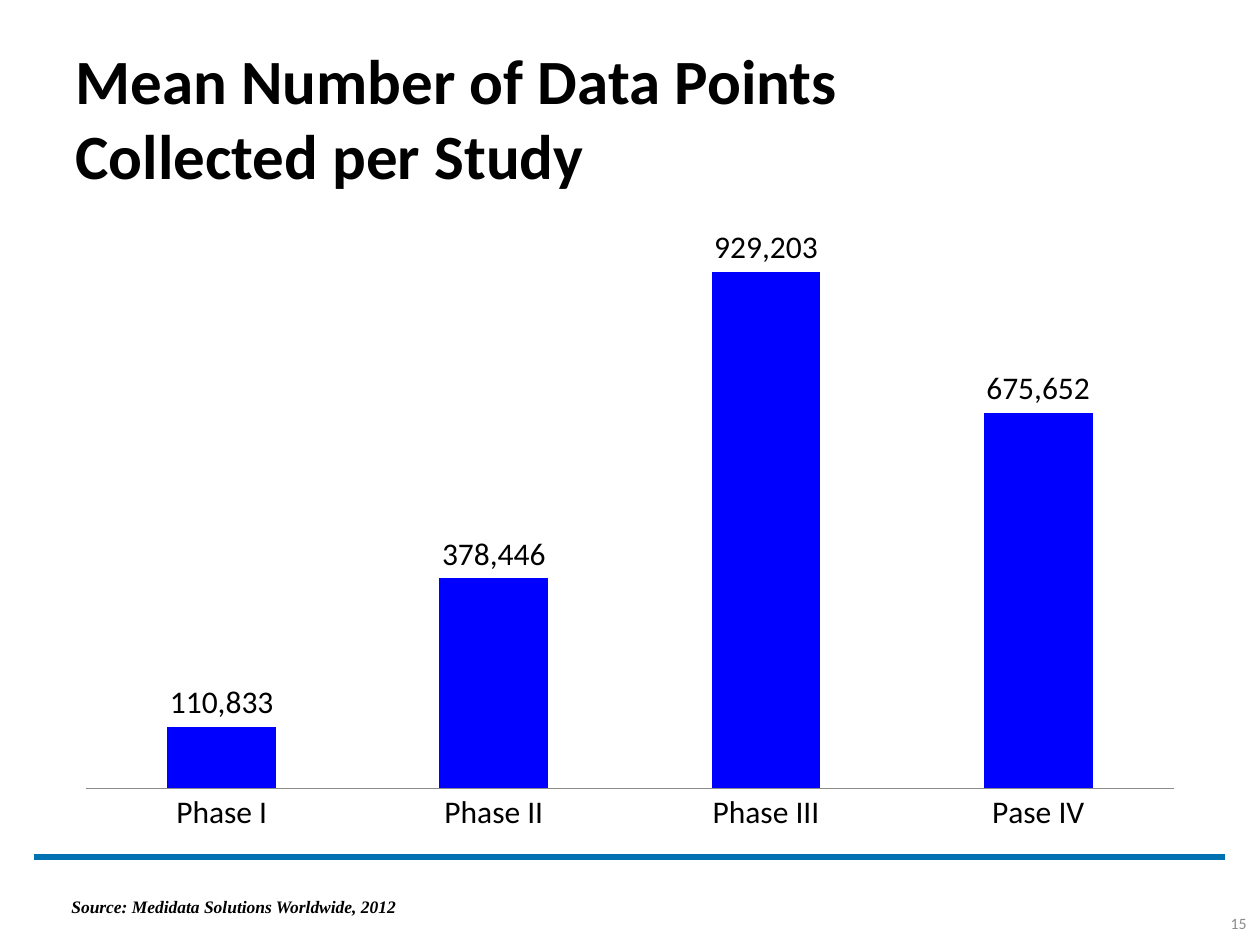
import dataclasses

import pptx
import pptx.chart.data
import pptx.dml.color
import pptx.enum.chart
import pptx.enum.shapes
import pptx.enum.text
import pptx.oxml
import pptx.oxml.ns
import pptx.util

ALIGN = pptx.enum.text.PP_ALIGN
ANCHOR = pptx.enum.text.MSO_ANCHOR
CHART = pptx.enum.chart


@dataclasses.dataclass(frozen=True)
class Theme:
    ink: str = "000000"
    bar: str = "0000FF"
    rule: str = "0072B2"
    muted: str = "8C8C8C"
    sans: str = "Calibri"
    serif: str = "Times New Roman"
    title_size: int = 36
    chart_size: int = 18
    source_size: int = 10
    number_size: int = 9


def assign(target, values):
    for name, value in values.items():
        setattr(target, name, value)


class SlideBuilder:
    """Draws themed elements on the current page, with lengths in px."""

    scale = 914400 / 126

    def __init__(self, deck, theme):
        self.theme = theme
        assign(deck, {"slide_width": self.px(1260), "slide_height": self.px(945)})
        self.page = deck.slides.add_slide(deck.slide_layouts[5])

    def px(self, length):
        return pptx.util.Emu(round(length * self.scale))

    def frame(self, *lengths):
        return [self.px(length) for length in lengths]

    def style_font(self, font, size, color, name, **extra):
        assign(font, {"size": pptx.util.Pt(size), "name": name, **extra})
        font.color.rgb = pptx.dml.color.RGBColor.from_string(color)

    def fill_text(self, box, text, align, anchor, **style):
        assign(box.text_frame, {
            "text": text,
            "word_wrap": True,
            "auto_size": pptx.enum.text.MSO_AUTO_SIZE.NONE,
            "vertical_anchor": anchor,
        })
        for para in box.text_frame.paragraphs:
            para.alignment = align
            for span in para.runs:
                self.style_font(span.font, **style)

    def title(self, text, frame):
        box = self.page.shapes.title
        assign(box, dict(zip(("left", "top", "width", "height"), self.frame(*frame))))
        self.fill_text(box, text, ALIGN.LEFT, ANCHOR.MIDDLE,
                       size=self.theme.title_size, color=self.theme.ink,
                       name=self.theme.sans, bold=True)

    def text(self, text, frame, align=ALIGN.LEFT, anchor=ANCHOR.TOP, **style):
        box = self.page.shapes.add_textbox(*self.frame(*frame))
        self.fill_text(box, text, align, anchor, **style)

    def rule(self, left, right, top):
        line = self.page.shapes.add_connector(
            pptx.enum.shapes.MSO_CONNECTOR.STRAIGHT, *self.frame(left, top, right, top))
        line.line.width = pptx.util.Pt(3)
        line.line.color.rgb = pptx.dml.color.RGBColor.from_string(self.theme.rule)
        properties = line._element.spPr
        properties.append(pptx.oxml.parse_xml(
            f"<a:effectLst {pptx.oxml.ns.nsdecls('a')}/>"))

    def columns(self, values, frame):
        data = pptx.chart.data.CategoryChartData(number_format="#,##0")
        data.categories = list(values)
        data.add_series("Series 1", list(values.values()))
        chart = self.page.shapes.add_chart(
            CHART.XL_CHART_TYPE.COLUMN_CLUSTERED, *self.frame(*frame), data).chart
        assign(chart, {"has_legend": False, "has_title": False})
        self.style_font(chart.font, self.theme.chart_size, self.theme.ink, self.theme.sans)

        assign(chart.value_axis, {
            "visible": False, "has_major_gridlines": False,
            "minimum_scale": 0, "maximum_scale": 1000000,
        })
        axis = chart.category_axis
        axis.major_tick_mark = CHART.XL_TICK_MARK.NONE
        axis.format.line.color.rgb = pptx.dml.color.RGBColor.from_string(self.theme.muted)

        plot = chart.plots[0]
        assign(plot, {"gap_width": 150, "overlap": -25,
                      "vary_by_categories": False, "has_data_labels": True})
        assign(plot.data_labels, {
            "show_value": True, "number_format": "#,##0",
            "number_format_is_linked": False,
            "position": CHART.XL_LABEL_POSITION.OUTSIDE_END,
        })
        fill = plot.series[0].format.fill
        fill.solid()
        fill.fore_color.rgb = pptx.dml.color.RGBColor.from_string(self.theme.bar)


def main():
    deck = pptx.Presentation()
    theme = Theme()
    builder = SlideBuilder(deck, theme)
    builder.rule(34, 1225, 857)
    builder.title("Mean Number of Data Points\vCollected per Study", (63, 38, 1134, 158))
    builder.columns({"Phase I": 110833, "Phase II": 378446,
                     "Phase III": 929203, "Pase IV": 675652}, (63, 220, 1134, 624))
    builder.text("15", (1207, 903, 52, 40), ALIGN.RIGHT, ANCHOR.MIDDLE,
                 size=theme.number_size, color=theme.muted, name=theme.sans)
    builder.text("Source: Medidata Solutions Worldwide, 2012", (59, 890, 1148, 34),
                 size=theme.source_size, color=theme.ink, name=theme.serif,
                 bold=True, italic=True)
    deck.save("out.pptx")


if __name__ == "__main__":
    main()
